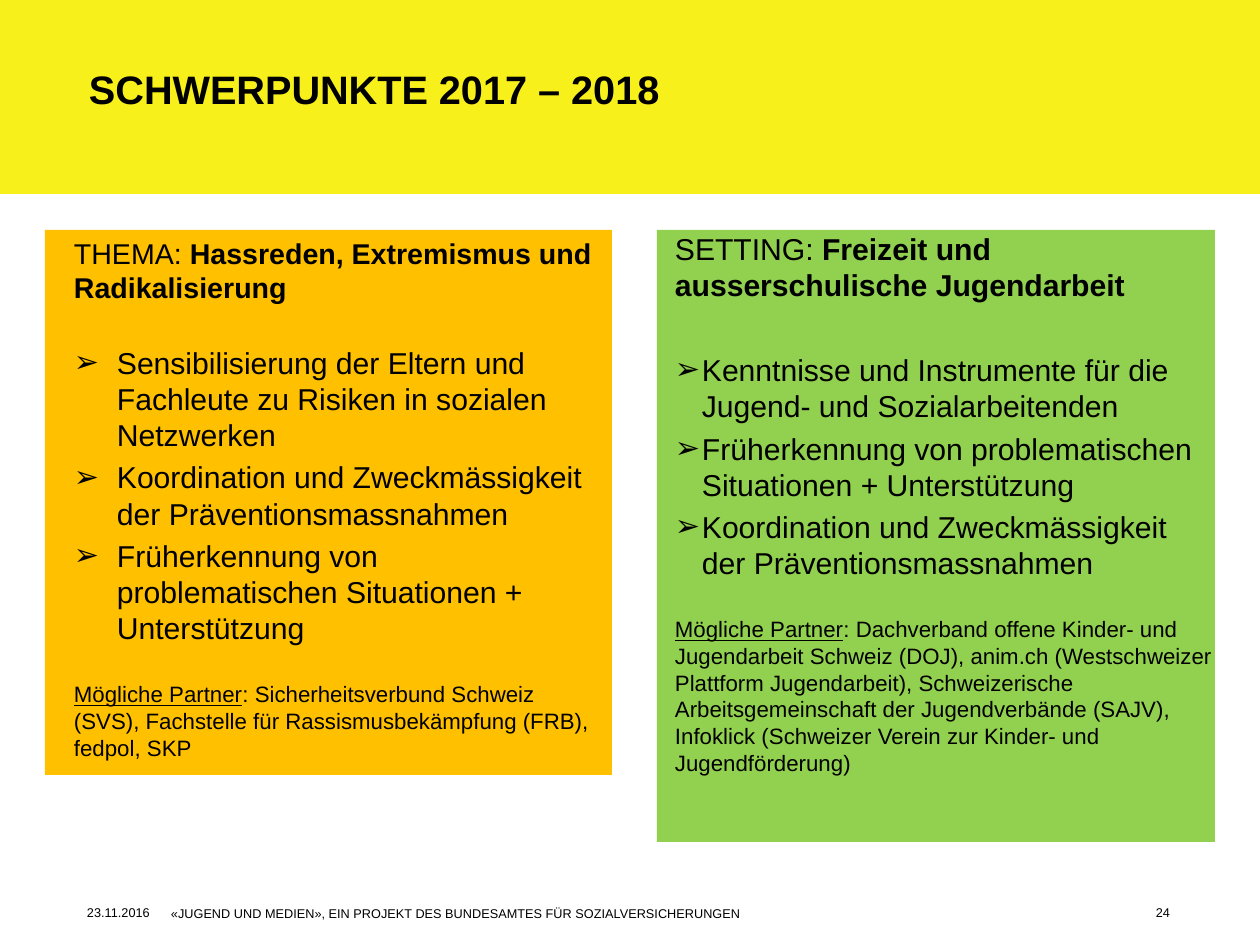
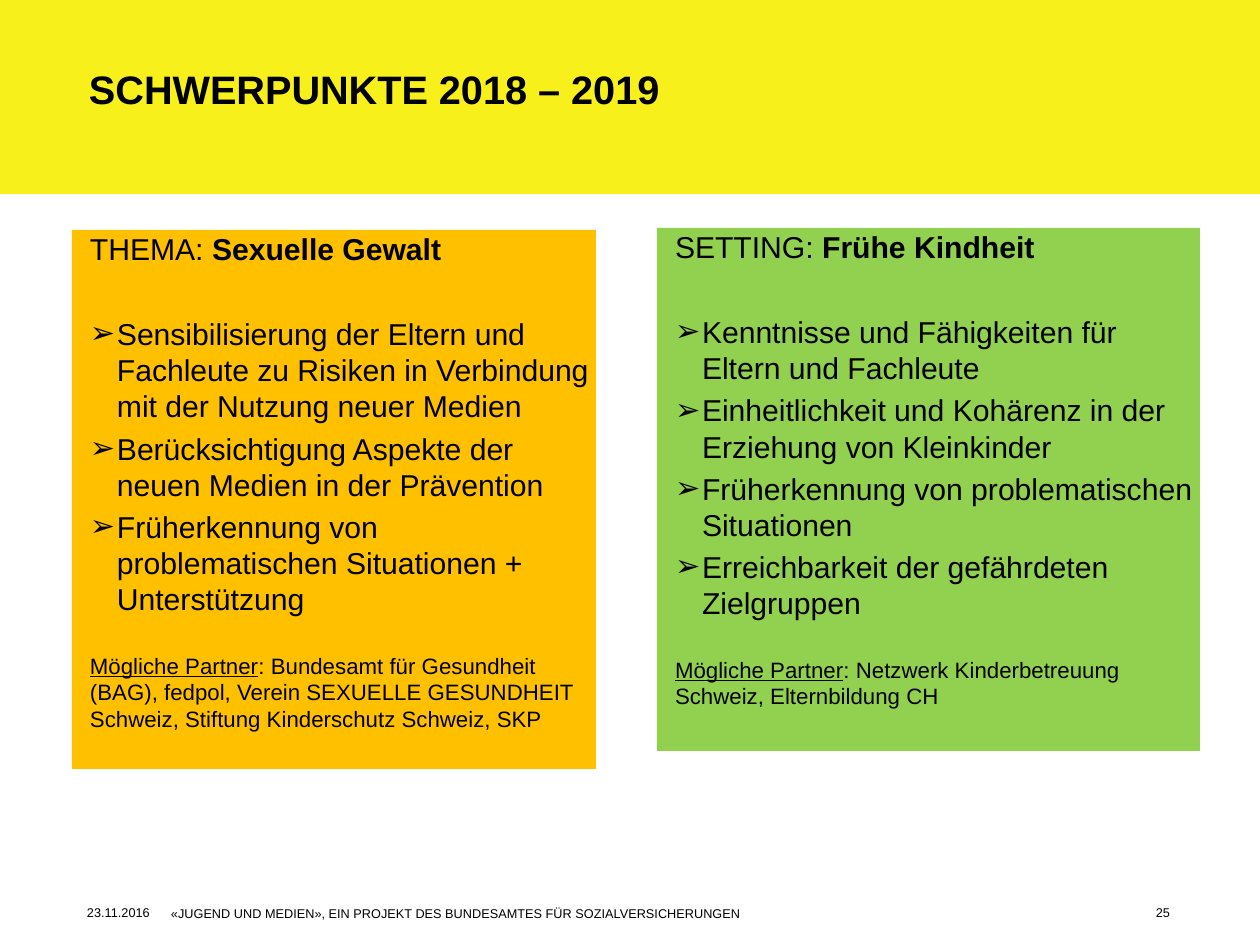
from dataclasses import dataclass
from pptx import Presentation
from pptx.dml.color import RGBColor
from pptx.enum.shapes import MSO_SHAPE
from pptx.enum.text import MSO_ANCHOR, PP_ALIGN
from pptx.oxml.ns import qn
from pptx.util import Emu, Pt
from lxml import etree

RECT = MSO_SHAPE.RECTANGLE
TOP = MSO_ANCHOR.TOP
LEFT, RIGHT = PP_ALIGN.LEFT, PP_ALIGN.RIGHT
SCALE = 8000
WIDE, HIGH = 1260, 945


@dataclass(frozen=True)
class Theme:
    """Colours, font and type sizes in points."""
    ink: str = "000000"
    band: str = "F8F01B"
    topic: str = "FFC000"
    place: str = "92D050"
    font: str = "Arial"
    title: int = 25
    body: int = 19
    lead: int = 18
    note: int = 14
    foot: int = 8


THEME = Theme()
LOOSE = {"pad": (0, 0), "head": THEME.body, "left": 45, "hang": 27, "gap": 31}
TIGHT = {"pad": (11, 6), "head": THEME.lead, "left": 61, "hang": 43, "gap": 25}
EDGE = 18
NOTE_GAP = 22
ITEM_GAP = 3.8

DATE = "23.11.2016"
FOOTER = "«JUGEND UND MEDIEN», EIN PROJEKT DES BUNDESAMTES FÜR SOZIALVERSICHERUNGEN"

SLIDES = [
    ("SCHWERPUNKTE 2017 – 2018", 24, [
        {"box": (657, 230, 558, 612), "fill": THEME.place, "style": LOOSE,
         "label": "SETTING: ",
         "topic": "Freizeit und ausserschulische Jugendarbeit",
         "items": [
             "Kenntnisse und Instrumente für die Jugend- und Sozialarbeitenden",
             "Früherkennung von problematischen Situationen + Unterstützung",
             "Koordination und Zweckmässigkeit der Präventionsmassnahmen"],
         "partners": "Dachverband offene Kinder- und Jugendarbeit Schweiz (DOJ), "
                     "anim.ch (Westschweizer Plattform Jugendarbeit), "
                     "Schweizerische Arbeitsgemeinschaft der Jugendverbände (SAJV), "
                     "Infoklick (Schweizer Verein zur Kinder- und Jugendförderung)"},
        {"box": (45, 230, 567, 545), "fill": THEME.topic, "style": TIGHT,
         "label": "THEMA: ",
         "topic": "Hassreden, Extremismus und Radikalisierung",
         "items": [
             "Sensibilisierung der Eltern und Fachleute zu Risiken in sozialen Netzwerken",
             "Koordination und Zweckmässigkeit der Präventionsmassnahmen",
             "Früherkennung von problematischen Situationen + Unterstützung"],
         "partners": "Sicherheitsverbund Schweiz (SVS), Fachstelle für "
                     "Rassismusbekämpfung (FRB), fedpol, SKP"}]),
    ("SCHWERPUNKTE 2018 – 2019", 25, [
        {"box": (72, 230, 524, 539), "fill": THEME.topic, "style": LOOSE,
         "label": "THEMA: ",
         "topic": "Sexuelle Gewalt",
         "items": [
             "Sensibilisierung der Eltern und Fachleute zu Risiken in Verbindung "
             "mit der Nutzung neuer Medien",
             "Berücksichtigung Aspekte der neuen Medien in der Prävention",
             "Früherkennung von problematischen Situationen + Unterstützung"],
         "partners": "Bundesamt für Gesundheit (BAG), fedpol, Verein SEXUELLE "
                     "GESUNDHEIT Schweiz, Stiftung Kinderschutz Schweiz, SKP"},
        {"box": (657, 228, 543, 523), "fill": THEME.place, "style": LOOSE,
         "label": "SETTING: ",
         "topic": "Frühe Kindheit",
         "items": [
             "Kenntnisse und Fähigkeiten für Eltern und Fachleute",
             "Einheitlichkeit und Kohärenz in der Erziehung von Kleinkinder",
             "Früherkennung von problematischen Situationen",
             "Erreichbarkeit der gefährdeten Zielgruppen"],
         "partners": "Netzwerk Kinderbetreuung Schweiz, Elternbildung CH"}]),
]


def px(num):
    """Turn px into EMU."""
    return Emu(num * SCALE)


def apply(target, values):
    """Set each named value on the target."""
    for name, value in values.items():
        setattr(target, name, value)


def add_run(para, text, size, **extra):
    """Add one run in the theme font."""
    run = para.add_run()
    run.text = text
    apply(run.font, {"name": THEME.font, "size": Pt(size), **extra})
    run.font.color.rgb = RGBColor.from_string(THEME.ink)


def set_frame(frame, pad=(0, 0)):
    """Wrap the frame's text from the top with the given padding."""
    side, edge = map(px, pad)
    apply(frame, {"word_wrap": True, "vertical_anchor": TOP,
                  "margin_left": side, "margin_right": side,
                  "margin_top": edge, "margin_bottom": edge})


def add_rect(slide, box, fill):
    """Add a plain filled rectangle."""
    rect = slide.shapes.add_shape(RECT, *map(px, box))
    rect.shadow.inherit = False
    rect.fill.solid()
    rect.fill.fore_color.rgb = RGBColor.from_string(fill)
    rect.line.fill.background()
    return rect


def add_label(slide, box, text, size, align=LEFT, **extra):
    """Add a one-line text box."""
    frame = slide.shapes.add_textbox(*map(px, box)).text_frame
    set_frame(frame)
    para = frame.paragraphs[0]
    para.alignment = align
    add_run(para, text, size, **extra)


def set_para(para, left, before=0, hang=0):
    """Set indent and spacing, with a bullet where the line hangs."""
    props = para._p.get_or_add_pPr()
    props.set("marL", str(px(left)))
    props.set("indent", str(px(-hang)))
    if hang:
        etree.SubElement(props, qn("a:buFont")).set("typeface", THEME.font)
        etree.SubElement(props, qn("a:buChar")).set("char", "➢")
    apply(para, {"alignment": LEFT, "space_before": Pt(before)})


def add_panel(slide, panel):
    """Add a coloured panel with heading, bullets and partners."""
    style = panel["style"]
    frame = add_rect(slide, panel["box"], panel["fill"]).text_frame
    set_frame(frame, style["pad"])
    head = frame.paragraphs[0]
    set_para(head, EDGE)
    add_run(head, panel["label"], style["head"])
    add_run(head, panel["topic"], style["head"], bold=True)
    for rank, item in enumerate(panel["items"]):
        para = frame.add_paragraph()
        set_para(para, style["left"], ITEM_GAP if rank else style["gap"], style["hang"])
        add_run(para, item, THEME.body)
    note = frame.add_paragraph()
    set_para(note, EDGE, NOTE_GAP)
    add_run(note, "Mögliche Partner", THEME.note, underline=True)
    add_run(note, ": " + panel["partners"], THEME.note)


def add_base(slide, title, page):
    """Add the band, title and footer that all slides share."""
    add_rect(slide, (0, 0, WIDE, 194), THEME.band)
    add_label(slide, (89, 65, 1080, 101), title, THEME.title, bold=True)
    add_label(slide, (87, 905, 75, 17), DATE, THEME.foot)
    add_label(slide, (171, 906, 927, 18), FOOTER, THEME.foot)
    add_label(slide, (1135, 905, 35, 26), str(page), THEME.foot, RIGHT)


def main():
    """Build and save the deck."""
    deck = Presentation()
    apply(deck, {"slide_width": px(WIDE), "slide_height": px(HIGH)})
    for title, page, panels in SLIDES:
        slide = deck.slides.add_slide(deck.slide_layouts[6])
        add_base(slide, title, page)
        for panel in panels:
            add_panel(slide, panel)
    deck.save("out.pptx")


if __name__ == "__main__":
    main()
